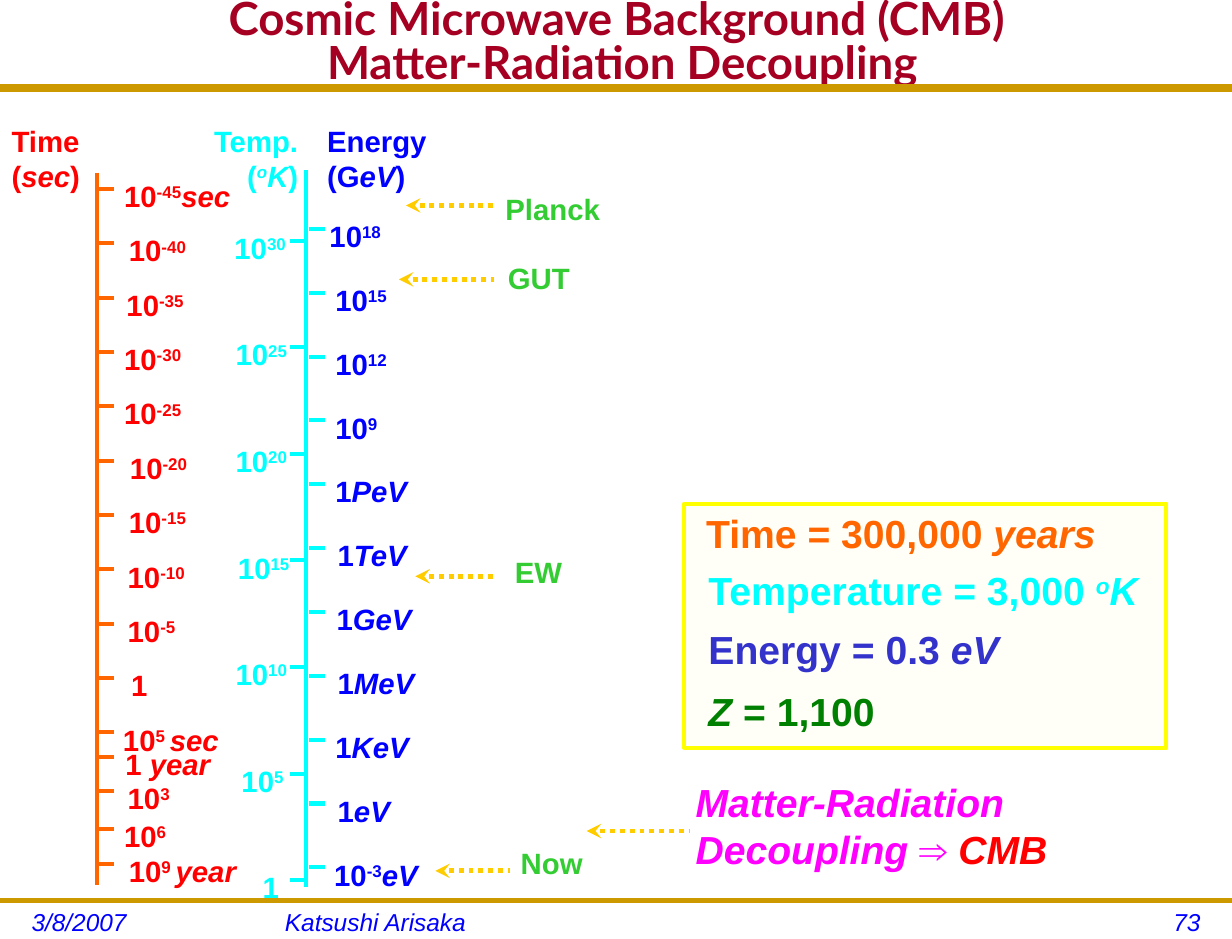
import dataclasses

import pptx
import pptx.dml.color
import pptx.enum.dml
import pptx.enum.shapes
import pptx.enum.text
import pptx.oxml
import pptx.oxml.ns
import pptx.util

Inches = pptx.util.Inches
Pt = pptx.util.Pt
ALIGN = pptx.enum.text.PP_ALIGN


@dataclasses.dataclass(frozen=True)
class Theme:
    title_font: str = "Lato"
    body_font: str = "Arial"
    title_size: int = 28
    fact_size: int = 24
    label_size: int = 18
    footer_size: int = 15
    title: str = "A50021"
    rule: str = "CC9900"
    orange: str = "FF6600"
    red: str = "FF0000"
    cyan: str = "00FFFF"
    blue: str = "0000FF"
    arrow: str = "FFCC00"
    epoch: str = "33CC33"
    event: str = "FF00FF"
    energy_fact: str = "3333CC"
    redshift: str = "008000"
    panel: str = "FFFFF3"
    panel_line: str = "FFFF00"


def rgb(color):
    return pptx.dml.color.RGBColor.from_string(color)


def add_element(parent, tag, **attributes):
    child = pptx.oxml.parse_xml(f"<a:{tag} {pptx.oxml.ns.nsdecls('a')}/>")
    for name, value in attributes.items():
        child.set(name, value)
    parent.append(child)


def power(exponent, unit=""):
    """Runs for a power of ten, with an optional italic unit."""
    runs = [("10", ""), (exponent, "^")]
    return runs + [(unit, "i")] if unit else runs


def quantity(value, unit):
    return [(value, ""), (unit, "i")]


class SlideBuilder:
    def __init__(self, slide, theme):
        self.slide = slide
        self.theme = theme

    def add_run(self, p, text, size, color, flags="", bold=True, font=None):
        """Flags: i for italic, ^ for superscript."""
        r = p.add_run()
        r.text = text
        r.font.name = font or self.theme.body_font
        r.font.size = Pt(size)
        r.font.bold = bold
        r.font.italic = "i" in flags
        r.font.color.rgb = rgb(color)
        if "^" in flags:
            r.font._element.set("baseline", "30000")

    def title(self, lines):
        sp = self.slide.shapes.title
        sp.left, sp.top, sp.width, sp.height = map(Inches, (0.17, 0, 10.17, 0.75))
        tf = sp.text_frame
        tf.auto_size = pptx.enum.text.MSO_AUTO_SIZE.NONE
        tf.vertical_anchor = pptx.enum.text.MSO_ANCHOR.MIDDLE
        p = tf.paragraphs[0]
        p.alignment = ALIGN.CENTER
        p.line_spacing = 0.8
        for i, line in enumerate(lines):
            if i:
                p.add_line_break()
            self.add_run(p, line, self.theme.title_size, self.theme.title,
                         font=self.theme.title_font)

    def text(self, x, y, w, h, paragraphs, color, size=None, align=ALIGN.LEFT, bold=True):
        """Each paragraph is a list of (text, flags) or (text, flags, color)."""
        sp = self.slide.shapes.add_textbox(*map(Inches, (x, y, w, h)))
        tf = sp.text_frame
        tf.word_wrap = True
        for i, runs in enumerate(paragraphs):
            p = tf.add_paragraph() if i else tf.paragraphs[0]
            p.alignment = align
            for text, flags, *own_color in runs:
                self.add_run(p, text, size or self.theme.label_size,
                             own_color[0] if own_color else color, flags, bold)

    def line(self, x1, y1, x2, y2, color, width=2.5):
        cx = self.slide.shapes.add_connector(
            pptx.enum.shapes.MSO_CONNECTOR.STRAIGHT, *map(Inches, (x1, y1, x2, y2)))
        cx.line.color.rgb = rgb(color)
        cx.line.width = Pt(width)
        add_element(cx._element.spPr, "effectLst")
        return cx

    def arrow(self, tip, tail, y):
        cx = self.line(tip, y, tail, y, self.theme.arrow, 3)
        cx.line.dash_style = pptx.enum.dml.MSO_LINE.ROUND_DOT
        add_element(cx.line._get_or_add_ln(), "headEnd", type="stealth")

    def panel(self, x, y, w, h):
        sp = self.slide.shapes.add_shape(
            pptx.enum.shapes.MSO_SHAPE.RECTANGLE, *map(Inches, (x, y, w, h)))
        sp.shadow.inherit = False
        sp.fill.solid()
        sp.fill.fore_color.rgb = rgb(self.theme.panel)
        fill_color = sp._element.spPr.find(".//" + pptx.oxml.ns.qn("a:srgbClr"))
        add_element(fill_color, "alpha", val="50000")
        sp.line.color.rgb = rgb(self.theme.panel_line)
        sp.line.width = Pt(2.5)

    def scale(self, tick_x, ticks, line_color, labels, text_color, width):
        """Ticks of one axis; labels are (left, runs), one beside each tick."""
        for y, (left, runs) in zip(ticks, labels):
            self.line(tick_x, y, tick_x + 0.14, y, line_color)
            self.text(left, y - 0.14, width, 0.4, [runs], text_color)


def evenly(first, last, count):
    return [first + (last - first) * i / (count - 1) for i in range(count)]


def add_scales(b, t):
    b.line(0.83, 1.47, 0.83, 7.54, t.orange)
    b.line(2.61, 1.45, 2.61, 7.56, t.cyan)

    time_lefts = [0.96, 1, 0.98, 0.96, 0.96, 1.01, 1, 0.99, 0.99]
    times = [(x, power(str(5 * i - 45), "" if i else "sec"))
             for i, x in enumerate(time_lefts)]
    times += [(1.02, [("1", "")]), (0.95, power("5 ", "sec")),
              (0.97, quantity("1 ", "year")), (0.99, power("3")),
              (0.96, power("6")), (1, power("9 ", "year"))]
    time_ticks = evenly(1.61, 6.24, 11) + [6.45, 6.74, 7.06, 7.36]
    b.scale(0.83, time_ticks, t.orange, times, t.red, 1.4)

    energies = [(2.71, power("18"))]
    energies += [(2.76, power(e)) for e in ("15", "12", "9")]
    energies += [(x, quantity("1", unit)) for x, unit in (
        (2.76, "PeV"), (2.78, "TeV"), (2.77, "GeV"),
        (2.78, "MeV"), (2.76, "KeV"), (2.78, "eV"))]
    energies.append((2.75, power("-3", "eV")))
    b.scale(2.63, evenly(1.95, 7.39, 11), t.cyan, energies, t.blue, 1.2)

    temp_lefts = [1.9, 1.91, 1.91, 1.93, 1.91, 1.96]
    temps = [(x, power(str(30 - 5 * i))) for i, x in enumerate(temp_lefts)]
    temps.append((2.14, [("1", "")]))
    b.scale(2.47, evenly(2.05, 7.5, 7), t.cyan, temps, t.cyan, 0.8)

    b.text(0, 1, 0.92, 0.7, [[("Time", "")], [("(", ""), ("sec", "i"), (")", "")]], t.red)
    b.text(1.6, 1, 1.04, 0.7,
           [[("Temp.", "")], [("(", ""), ("o", "i^"), ("K", "i"), (")", "")]],
           t.cyan, align=ALIGN.RIGHT)
    b.text(2.69, 1, 1.13, 0.7, [[("Energy (G", ""), ("eV", "i"), (")", "")]], t.blue)


def add_epochs(b, t):
    for name, tip, tail, arrow_y, x, y in (
            ("Planck", 3.46, 4.21, 1.75, 4.21, 1.58),
            ("GUT", 3.4, 4.21, 2.38, 4.23, 2.17),
            ("EW", 3.54, 4.21, 4.91, 4.29, 4.67),
            ("Now", 3.71, 4.35, 7.42, 4.34, 7.15)):
        b.arrow(tip, tail, arrow_y)
        b.text(x, y, 1.04, 0.4, [[(name, "")]], t.epoch)
    b.arrow(5, 5.87, 7.08)
    b.text(5.83, 6.58, 4.33, 0.9,
           [[("Matter-Radiation", "i")],
            [("Decoupling ⇒ ", "i"), ("CMB", "i", t.red)]], t.event, t.fact_size)


def add_facts(b, t):
    b.panel(5.83, 4.29, 4.11, 2.08)
    for x, y, color, runs in (
            (5.92, 4.29, t.orange, quantity("Time = 300,000 ", "years")),
            (5.94, 4.78, t.cyan, [("Temperature = 3,000 ", ""), ("o", "i^"), ("K", "i")]),
            (5.94, 5.28, t.energy_fact, quantity("Energy = 0.3 ", "eV")),
            (5.94, 5.81, t.redshift, [("Z", "i"), (" = 1,100", "")])):
        b.text(x, y, 4.17, 0.5, [runs], color, t.fact_size)


def main():
    prs = pptx.Presentation()
    prs.slide_width, prs.slide_height = Inches(10.5), Inches(8)
    t = Theme()
    b = SlideBuilder(prs.slides.add_slide(prs.slide_layouts[5]), t)

    b.line(0, 0.75, 10.5, 0.75, t.rule, 4.5)
    b.line(0, 7.67, 10.5, 7.67, t.rule, 3)
    for x, w, text, align in ((0.17, 2.08, "3/8/2007", ALIGN.LEFT),
                              (2.33, 6.08, "Katsushi Arisaka", ALIGN.LEFT),
                              (8.5, 1.83, "73", ALIGN.RIGHT)):
        b.text(x, 7.68, w, 0.32, [[(text, "i")]], t.blue, t.footer_size, align, bold=False)
    b.title(["Cosmic Microwave Background (CMB)", " Matter-Radiation Decoupling"])
    add_scales(b, t)
    add_epochs(b, t)
    add_facts(b, t)
    prs.save("out.pptx")


if __name__ == "__main__":
    main()
